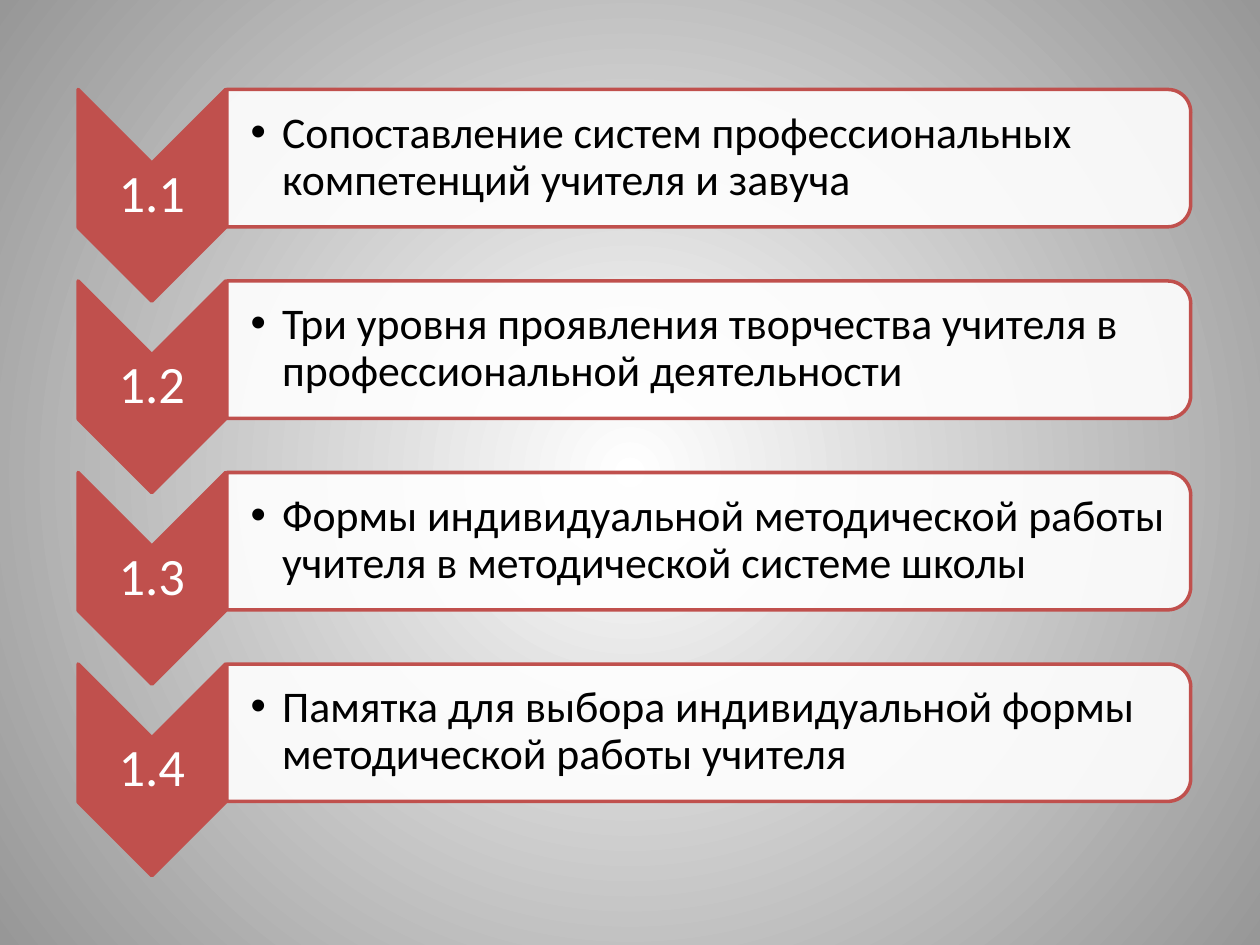
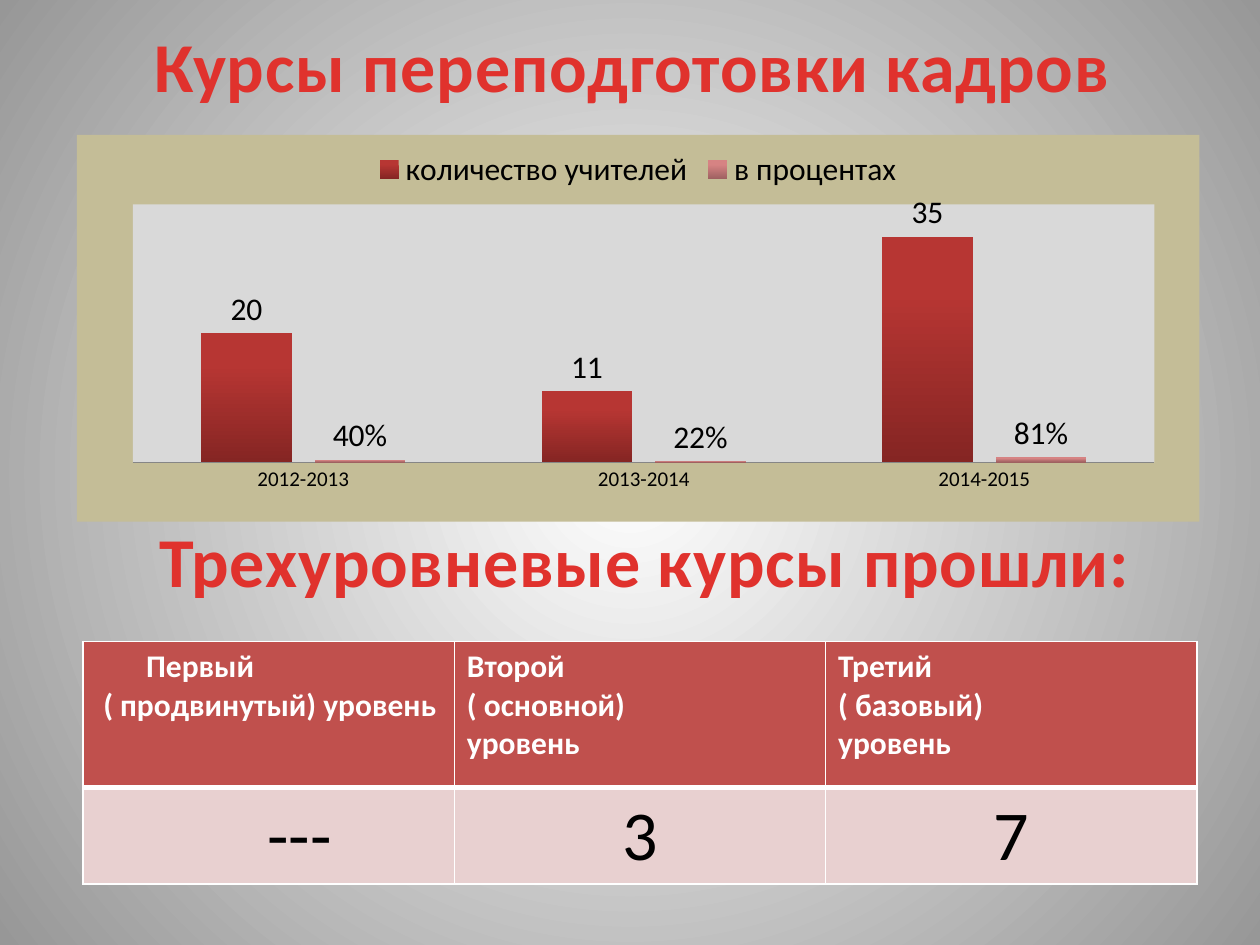
from lxml.etree import SubElement
from pptx import Presentation
from pptx.chart.data import CategoryChartData
from pptx.dml.color import RGBColor
from pptx.enum.chart import XL_CHART_TYPE, XL_LABEL_POSITION, XL_LEGEND_POSITION, XL_TICK_MARK
from pptx.enum.shapes import MSO_SHAPE
from pptx.enum.text import MSO_ANCHOR, MSO_AUTO_SIZE, PP_ALIGN
from pptx.oxml import parse_xml
from pptx.oxml.ns import nsdecls, qn
from pptx.util import Inches, Pt

COLORS = {
    "white": "FFFFFF", "black": "000000", "edge": "979797", "accent": "C0504D",
    "heading": "E0322D", "pale": "E8D0D0", "sand": "C4BD97", "plot": "D9D9D9",
    "axis": "868686", "count_top": "B73633", "count_bottom": "852523",
    "percent_top": "D68383", "percent_bottom": "9F6161",
}
RGB = {name: RGBColor.from_string(value) for name, value in COLORS.items()}

HEADING = {"size": Pt(40), "bold": True, "name": "Calibri"}
NUMBER = {"size": Pt(30), "name": "Calibri"}
TOPIC = {"size": Pt(25), "name": "Calibri"}
LEVEL = {"size": Pt(18), "bold": True, "name": "Calibri"}
RESULT = {"size": Pt(40), "bold": False, "name": "Calibri"}


def write(frame, lines, font_format, color, align=PP_ALIGN.LEFT, spacing=1.0):
    frame.word_wrap = True
    for index, line in enumerate(lines):
        paragraph = frame.paragraphs[0] if index == 0 else frame.add_paragraph()
        paragraph.alignment = align
        paragraph.line_spacing = spacing
        run = paragraph.add_run()
        run.text = line
        for attribute, value in font_format.items():
            setattr(run.font, attribute, value)
        run.font.color.rgb = RGB[color]


def add_turned_shape(slide, kind, left, top, width, height):
    shape = slide.shapes.add_shape(
        kind, Inches(left + (width - height) / 2), Inches(top + (height - width) / 2),
        Inches(height), Inches(width))
    shape.rotation = 90
    shape.shadow.inherit = False
    shape.fill.solid()
    shape.line.color.rgb = RGB["accent"]
    shape.line.width = Pt(2)
    return shape


prs = Presentation()
prs.slide_width, prs.slide_height = Inches(10), Inches(7.5)

backdrop = prs.slide_master.background.fill
backdrop.gradient()
for stop, color, position in zip(backdrop.gradient_stops, ("white", "edge"), (0, 1)):
    stop.color.rgb = RGB[color]
    stop.position = position
backdrop_xml = prs.slide_master.element.find(".//" + qn("a:gradFill"))
backdrop_xml.replace(backdrop_xml.find(qn("a:lin")), parse_xml(
    f'<a:path {nsdecls("a")} path="circle">'
    '<a:fillToRect l="50000" t="50000" r="50000" b="50000"/></a:path>'))

topics_slide = prs.slides.add_slide(prs.slide_layouts[6])
topics = [
    "Сопоставление систем профессиональных компетенций учителя и завуча",
    "Три уровня проявления творчества учителя в профессиональной деятельности",
    "Формы индивидуальной методической работы учителя в методической системе школы",
    "Памятка для выбора индивидуальной формы методической работы учителя",
]
for row, topic in enumerate(topics):
    top = 0.71 + row * 1.52
    arrow = add_turned_shape(topics_slide, MSO_SHAPE.CHEVRON, 0.62, top, 1.17, 1.68)
    arrow.fill.fore_color.rgb = RGB["accent"]
    panel = add_turned_shape(topics_slide, MSO_SHAPE.ROUND_2_SAME_RECTANGLE, 1.8, top, 7.65, 1.09)
    panel.fill.fore_color.rgb = RGB["white"]
    panel_color = panel.element.spPr.find(qn("a:solidFill")).find(qn("a:srgbClr"))
    SubElement(panel_color, qn("a:alpha"), val="90000")

    number_box = topics_slide.shapes.add_textbox(
        Inches(0.62), Inches(top + 0.59), Inches(1.17), Inches(0.5))
    topic_box = topics_slide.shapes.add_textbox(
        Inches(1.8), Inches(top + 0.05), Inches(7.6), Inches(0.98))
    for box in (number_box, topic_box):
        box.text_frame.vertical_anchor = MSO_ANCHOR.MIDDLE
        for side in ("left", "top", "right", "bottom"):
            setattr(box.text_frame, f"margin_{side}", Inches(0.02))
    topic_box.text_frame.margin_left = Inches(0.19)
    write(number_box.text_frame, [f"1.{row + 1}"], NUMBER, "white", PP_ALIGN.CENTER, 0.9)
    write(topic_box.text_frame, [topic], TOPIC, "black", spacing=0.9)
    bullet = topic_box.text_frame.paragraphs[0]._p.get_or_add_pPr()
    bullet.set("marL", str(Inches(0.25)))
    bullet.set("indent", str(Inches(-0.25)))
    SubElement(bullet, qn("a:buFont"), typeface="Arial")
    SubElement(bullet, qn("a:buChar"), char="•")

courses_slide = prs.slides.add_slide(prs.slide_layouts[5])

chart_data = CategoryChartData()
chart_data.categories = ["2012-2013", "2013-2014", "2014-2015"]
chart_data.add_series("количество учителей", [20, 11, 35])
chart_data.add_series("в процентах", [0.4, 0.22, 0.81], number_format="0%")
chart = courses_slide.shapes.add_chart(
    XL_CHART_TYPE.COLUMN_CLUSTERED, Inches(0.61), Inches(1.07), Inches(8.91), Inches(3.07),
    chart_data).chart
chart.has_title = False
chart.font.name = "Calibri"
chart.font.size = Pt(18)
chart.font.color.rgb = RGB["black"]
chart.has_legend = True
chart.legend.position = XL_LEGEND_POSITION.TOP
chart.legend.include_in_layout = False
chart.value_axis.visible = False
chart.value_axis.has_major_gridlines = False
chart.value_axis.minimum_scale = 0
chart.value_axis.maximum_scale = 40
chart.category_axis.major_tick_mark = XL_TICK_MARK.NONE
chart.category_axis.tick_labels.font.size = Pt(12)
chart.category_axis.format.line.color.rgb = RGB["axis"]

columns = chart.plots[0]
columns.gap_width = 150
columns.overlap = -25
columns.vary_by_categories = False
for series, name, label_format in zip(columns.series, ("count", "percent"), ("General", "0%")):
    series.format.fill.gradient()
    series.format.fill.gradient_angle = 270
    for stop, end, position in zip(series.format.fill.gradient_stops, ("top", "bottom"), (0.25, 1)):
        stop.color.rgb = RGB[f"{name}_{end}"]
        stop.position = position
    labels = series.data_labels
    label_settings = {
        "show_value": True, "number_format": label_format,
        "number_format_is_linked": False, "position": XL_LABEL_POSITION.OUTSIDE_END,
    }
    for attribute, value in label_settings.items():
        setattr(labels, attribute, value)
    labels.font.size = Pt(18)
    labels.font.color.rgb = RGB["black"]

chart_xml = chart._chartSpace.find(qn("c:chart"))
plot_area = chart_xml.find(qn("c:plotArea"))
for old_layout in plot_area.findall(qn("c:layout")):
    plot_area.remove(old_layout)
layout = parse_xml(f'<c:layout {nsdecls("c")}><c:manualLayout/></c:layout>')
layout_values = {
    "layoutTarget": "inner", "xMode": "edge", "yMode": "edge",
    "x": "0.05", "y": "0.18", "w": "0.91", "h": "0.667",
}
for tag, value in layout_values.items():
    SubElement(layout[0], qn(f"c:{tag}"), val=value)
plot_area.insert(0, layout)
chart_fill, plot_fill = [
    parse_xml(f'<c:spPr {nsdecls("c", "a")}><a:solidFill><a:srgbClr val="{COLORS[color]}"/>'
              '</a:solidFill><a:ln><a:noFill/></a:ln></c:spPr>')
    for color in ("sand", "plot")]
chart_xml.addnext(chart_fill)
plot_area.append(plot_fill)

levels_heading = courses_slide.shapes.add_textbox(0, 0, 0, 0)
headings = [
    (courses_slide.shapes.title, "Курсы переподготовки кадров", (0.53, 0.13, 8.98, 0.77)),
    (levels_heading, "Трехуровневые курсы прошли:", (0.67, 4.06, 8.9, 0.77)),
]
for heading, text, place in headings:
    for attribute, value in zip(("left", "top", "width", "height"), place):
        setattr(heading, attribute, Inches(value))
    heading.text_frame.vertical_anchor = MSO_ANCHOR.TOP
    heading.text_frame.auto_size = MSO_AUTO_SIZE.SHAPE_TO_FIT_TEXT
    write(heading.text_frame, [text], HEADING, "heading", PP_ALIGN.CENTER)
    heading.text_frame.paragraphs[0].runs[0].font._element.set("spc", "50")

levels = [
    (["Первый", "( продвинутый) уровень"], "---"),
    (["Второй", "( основной)", "уровень"], "3"),
    (["Третий", "( базовый)", "уровень"], "7"),
]
table = courses_slide.shapes.add_table(
    2, 3, Inches(0.66), Inches(5.09), Inches(8.84), Inches(1.92)).table
table.horz_banding = False
table.rows[0].height, table.rows[1].height = Inches(1.16), Inches(0.76)
for column, (level, result) in enumerate(levels):
    header, value = table.cell(0, column), table.cell(1, column)
    write(header.text_frame, level, LEVEL, "white")
    write(value.text_frame, [result], RESULT, "black", PP_ALIGN.CENTER)
    for cell, color, edges in (
            (header, "accent", {"L": 1, "R": 1, "T": 1, "B": 3}),
            (value, "pale", {"L": 1, "R": 1, "T": 3, "B": 1})):
        properties = cell._tc.get_or_add_tcPr()
        for edge, width in edges.items():
            properties.append(parse_xml(
                f'<a:ln{edge} {nsdecls("a")} w="{Pt(width)}"><a:solidFill>'
                f'<a:srgbClr val="{COLORS["white"]}"/></a:solidFill></a:ln{edge}>'))
        cell.fill.solid()
        cell.fill.fore_color.rgb = RGB[color]

first_level = table.cell(0, 0).text_frame.paragraphs
first_result = table.cell(1, 0).text_frame.paragraphs
for paragraph, indent in zip([*first_level, *first_result], (0.4, 0.06, 0.49)):
    paragraph._p.get_or_add_pPr().set("marL", str(Inches(indent)))

prs.save("out.pptx")
